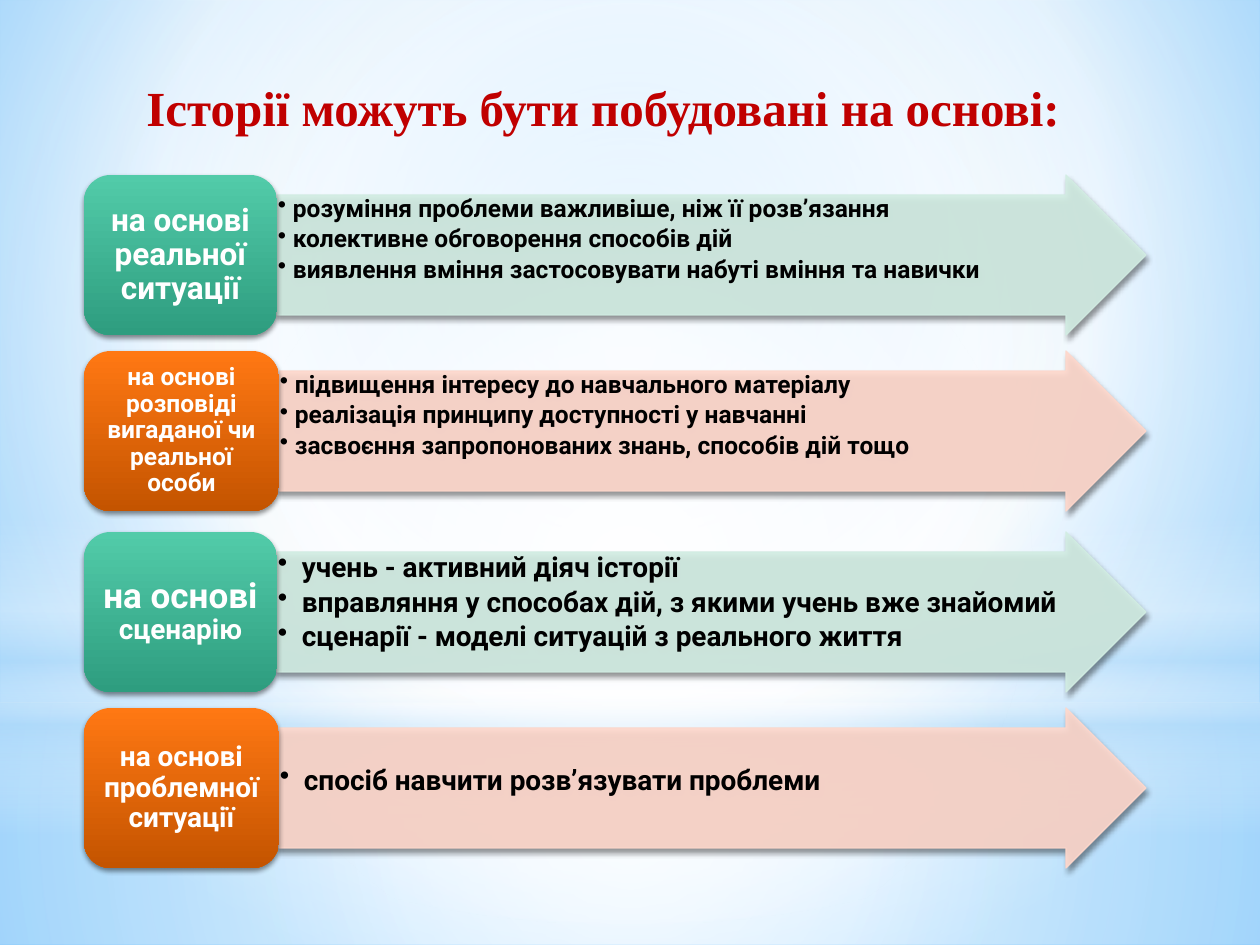
from dataclasses import dataclass

from lxml import etree
from pptx import Presentation
from pptx.dml.color import RGBColor
from pptx.enum.shapes import MSO_SHAPE
from pptx.enum.text import MSO_ANCHOR, PP_ALIGN
from pptx.oxml.ns import qn
from pptx.util import Emu, Pt

RECT, OVAL = MSO_SHAPE.RECTANGLE, MSO_SHAPE.OVAL
ARROW, CARD = MSO_SHAPE.RIGHT_ARROW, MSO_SHAPE.ROUNDED_RECTANGLE
TOP, MIDDLE = MSO_ANCHOR.TOP, MSO_ANCHOR.MIDDLE
LEFT, CENTER = PP_ALIGN.LEFT, PP_ALIGN.CENTER
PX = 914400 / 126
WIDE, HIGH = 1260, 945


@dataclass(frozen=True)
class Theme:
    body: str = "Roboto"
    head: str = "Times New Roman"
    title: str = "C00000"
    ink: str = "000000"
    white: str = "FFFFFF"
    sky: str = "B4DCFA"
    back: tuple = ((0, "9ED5FF"), (60, "FFFFFF"), (100, "5BB9FF"))
    green: tuple = ("52CBA9", "2E9D7F", "D2EDE3")
    orange: tuple = ("FF7813", "C45400", "FFD8CC")
    huge: int = 28
    large: int = 20
    big: int = 18
    mid: int = 16
    small: int = 14


T = Theme()

# label, label size, second part of label, points, point size, text drop
ROWS = (
    ("на основі реальної ситуації", T.big, "",
     ("розуміння проблеми важливіше, ніж її розв’язання",
      "колективне обговорення способів дій",
      "виявлення вміння застосовувати набуті вміння та навички"), T.small, 1),
    ("на основі розповіді вигаданої чи реальної особи", T.small, "",
     ("підвищення інтересу до навчального матеріалу",
      "реалізація принципу доступності у навчанні",
      "засвоєння запропонованих знань, способів дій тощо"), T.small, 1),
    ("на основі ", T.large, "сценарію",
     ("учень - активний діяч історії",
      "вправляння у способах дій, з якими учень вже знайомий",
      "сценарії - моделі ситуацій з реального життя"), T.mid, 1),
    ("на основі проблемної ситуації", T.mid, "",
     ("спосіб навчити розв’язувати проблеми",), T.mid, 38),
)


def px(n):
    return Emu(round(n * PX))


def node(parent, tag, **attrs):
    return etree.SubElement(parent, qn(tag), {k: str(v) for k, v in attrs.items()})


def blend(fill, root, stops, focus=None):
    """Gradient of (place, colour[, opacity]); top down, or round a focus."""
    fill.solid()
    old = root.find(".//" + qn("a:solidFill"))
    grad = etree.Element(qn("a:gradFill"), rotWithShape="1")
    marks = node(grad, "a:gsLst")
    for place, color, *alpha in stops:
        mark = node(marks, "a:gs", pos=place * 1000)
        tint = node(mark, "a:srgbClr", val=color)
        if alpha:
            node(tint, "a:alpha", val=alpha[0] * 1000)
    if focus:
        way = node(grad, "a:path", path="circle")
        node(way, "a:fillToRect", **{k: v * 1000 for k, v in zip("ltrb", focus)})
    else:
        node(grad, "a:lin", ang=5400000, scaled=0)
    old.getparent().replace(old, grad)


def add_form(slide, kind, *box):
    form = slide.shapes.add_shape(kind, *map(px, box))
    form.line.fill.background()
    form.shadow.inherit = False
    return form


def add_glow(slide, kind, box, stops, focus=None):
    form = add_form(slide, kind, *box)
    blend(form.fill, form._element.spPr, stops, focus)


def cast(form):
    """Soft shadow just below the shape."""
    effect = form._element.spPr.find(qn("a:effectLst"))
    shade = node(effect, "a:outerShdw", blurRad=Pt(3.1), dist=Pt(1.8),
                 dir=5400000, rotWithShape=0)
    node(node(shade, "a:srgbClr", val=T.ink), "a:alpha", val=45000)


def set_font(par, size, color, name=T.body):
    font = par.font
    font.name, font.size, font.bold = name, Pt(size), True
    font.color.rgb = RGBColor.from_string(color)


def set_frame(frame, anchor, side, top, foot):
    frame.word_wrap = True
    frame.vertical_anchor = anchor
    frame.margin_left = frame.margin_right = px(side)
    frame.margin_top, frame.margin_bottom = px(top), px(foot)


def add_title(slide, text):
    frame = slide.shapes.add_textbox(*map(px, (77, 71, 1052, 72))).text_frame
    frame.word_wrap = True
    par = frame.paragraphs[0]
    par.text, par.alignment = text, CENTER
    set_font(par, T.huge, T.title, T.head)


def add_arrow(slide, box, color, points, size, drop):
    form = add_form(slide, ARROW, *box)
    form.adjustments[0], form.adjustments[1] = 0.75, 0.5
    form.fill.solid()
    form.line.fill.solid()
    form.line.width = Pt(0.75)
    for paint in (form.fill.fore_color, form.line.color):
        paint.rgb = RGBColor.from_string(color)
    for tint in form._element.spPr.iter(qn("a:srgbClr")):
        node(tint, "a:alpha", val=90000)
    cast(form)
    frame = form.text_frame
    set_frame(frame, TOP, 1, drop, 1)
    indent = px(15 if size == T.small else 24)
    for i, point in enumerate(points):
        par = frame.add_paragraph() if i else frame.paragraphs[0]
        par.text, par.alignment = point, LEFT
        par.line_spacing, par.space_after = 0.9, Pt(round(size * 0.17, 1))
        props = par._p.get_or_add_pPr()
        props.set("marL", str(indent))
        props.set("indent", str(-indent))
        node(props, "a:buChar", char="•")
        set_font(par, size, T.ink)


def add_card(slide, box, colors, label, size, tail):
    form = add_form(slide, CARD, *box)
    blend(form.fill, form._element.spPr, zip((0, 100), colors))
    cast(form)
    frame = form.text_frame
    set_frame(frame, MIDDLE, 8, 4, 4)
    par = frame.paragraphs[0]
    par.text, par.alignment, par.line_spacing = label, CENTER, 0.9
    set_font(par, size, T.white)
    if tail:
        run = par.add_run()
        run.text, run.font.size = tail, Pt(T.mid)


def add_back(slide):
    blend(slide.background.fill, slide._element, T.back, (20, 10, 20, 60))
    mid = (50, 50, 50, 50)
    white, sky = T.white, T.sky
    add_glow(slide, RECT, (0, 703, WIDE, 242),
             ((0, white, 91), (37, white, 76), (100, sky, 79)), mid)
    add_glow(slide, RECT, (0, 0, WIDE, 703),
             ((0, white, 89), (48, white, 62), (100, sky, 79)), mid)
    add_glow(slide, RECT, (0, 519, WIDE, 315),
             ((0, white, 0), (29, white, 30), (45, sky, 40),
              (55, white, 26), (65, sky, 60), (100, white, 0)))
    add_glow(slide, OVAL, (0, 220, WIDE, 703),
             ((0, white, 100), (56, white, 0)), mid)


def main():
    deck = Presentation()
    deck.slide_width, deck.slide_height = px(WIDE), px(HIGH)
    slide = deck.slides.add_slide(deck.slide_layouts[6])
    add_back(slide)
    add_title(slide, "Історії можуть бути побудовані на основі:")
    left, right, high = 84, 1146, 160
    for i, (label, size, tail, points, small, drop) in enumerate(ROWS):
        pair, odd = divmod(i, 2)
        top = 175 + 357 * pair + 176 * odd
        width = 195 if odd else 193
        *deep, pale = T.orange if odd else T.green
        edge = left + width
        add_arrow(slide, (edge, top, right - edge, high), pale, points, small, drop)
        add_card(slide, (left, top, width, high), deep, label, size, tail)
    deck.save("out.pptx")


if __name__ == "__main__":
    main()
